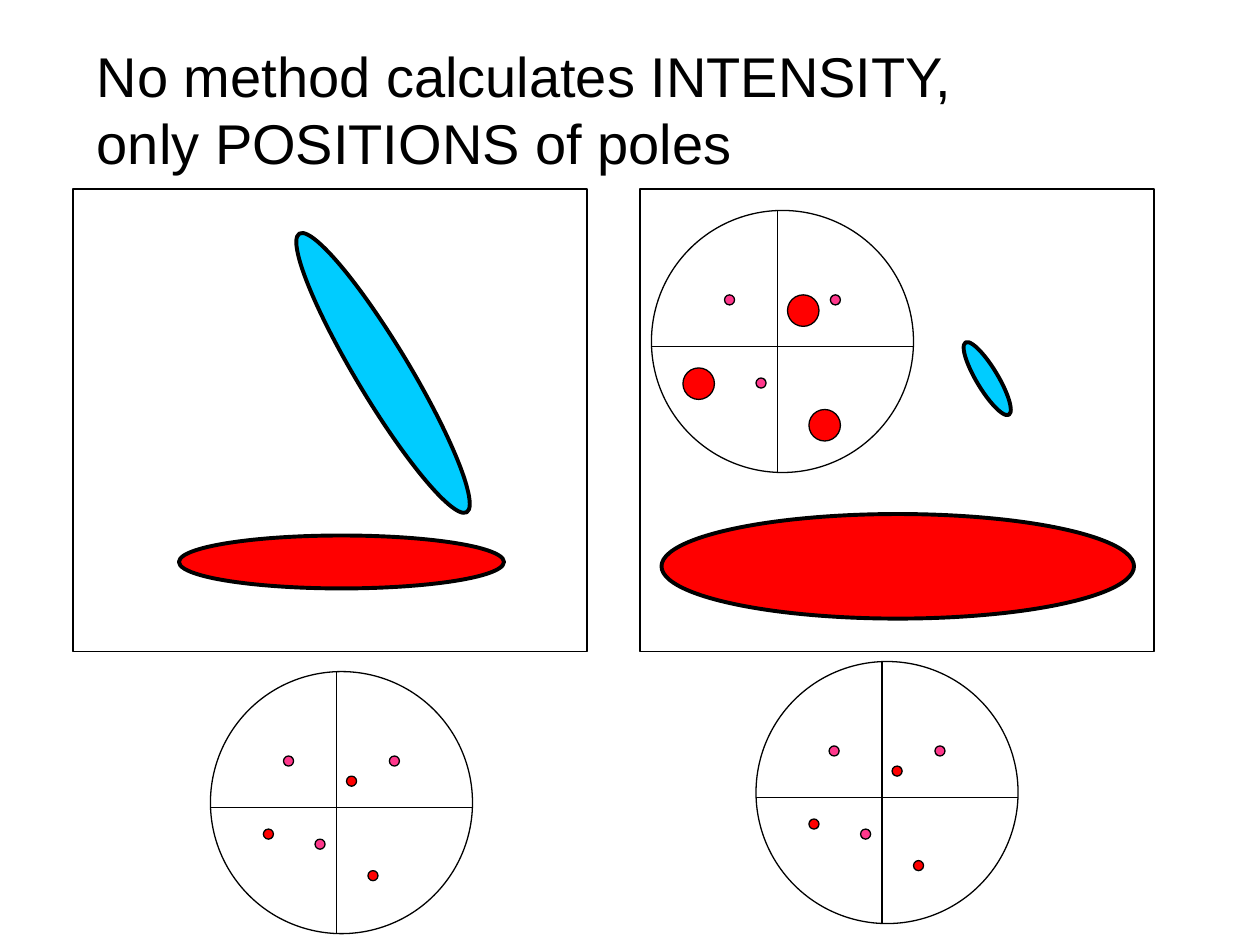
from typing import NamedTuple

from lxml import etree
from pptx import Presentation
from pptx.dml.color import RGBColor
from pptx.enum.shapes import MSO_CONNECTOR, MSO_SHAPE
from pptx.oxml.ns import qn
from pptx.util import Inches, Pt

OVAL = MSO_SHAPE.OVAL
RECT = MSO_SHAPE.RECTANGLE
LINE = MSO_CONNECTOR.STRAIGHT

HUES = {"ink": "000000", "red": "FF0000", "blue": "00CCFF", "pink": "FF388C"}
FORM = {"name": "Arial", "size": Pt(32)}
DISK = 2.08
DOT = 0.08
SPOT = 0.25


class Form(NamedTuple):
    kind: int
    left: float
    top: float
    wide: float
    high: float
    hue: str = ""
    width: float = 0.75
    turn: float = 0


class Pole(NamedTuple):
    left: float
    top: float
    hue: str


class Net(NamedTuple):
    left: float
    top: float
    size: float
    reds: list[Pole]
    group: bool = False


FORMS = [
    Form(RECT, 0.58, 1.5, 4.08, 3.67),
    Form(RECT, 5.08, 1.5, 4.08, 3.67),
    Form(OVAL, 1.42, 4.25, 2.58, 0.42, "red", 2.25),
    Form(OVAL, 1.75, 2.75, 2.58, 0.42, "blue", 2.25, 59),
    Form(OVAL, 5.25, 4.08, 3.75, 0.83, "red", 2.25),
    Form(OVAL, 7.5, 2.92, 0.67, 0.17, "blue", 2.25, 59),
]
PINKS = [Pole(0.58, 0.67, "pink"), Pole(1.42, 0.67, "pink"), Pole(0.83, 1.33, "pink")]
SMALL = [Pole(1.25, 1.58, "red"), Pole(0.42, 1.25, "red"), Pole(1.08, 0.83, "red")]
LARGE = [Pole(1.25, 1.58, "red"), Pole(0.25, 1.25, "red"), Pole(1.08, 0.67, "red")]
NETS = [
    Net(1.67, 5.33, DOT, SMALL),
    Net(6, 5.25, DOT, SMALL),
    Net(5.17, 1.67, SPOT, LARGE, True),
]


def tint(name: str) -> RGBColor:
    return RGBColor.from_string(HUES[name])


def draw_form(shapes, form: Form) -> None:
    box = [Inches(n) for n in (form.left, form.top, form.wide, form.high)]
    shape = shapes.add_shape(form.kind, *box)
    shape.shadow.inherit = False
    shape.rotation = form.turn
    if form.hue:
        shape.fill.solid()
        shape.fill.fore_color.rgb = tint(form.hue)
    else:
        shape.fill.background()
    shape.line.color.rgb = tint("ink")
    shape.line.width = Pt(form.width)


def draw_line(shapes, x1: float, y1: float, x2: float, y2: float) -> None:
    line = shapes.add_connector(LINE, *[Inches(n) for n in (x1, y1, x2, y2)])
    line.line.color.rgb = tint("ink")
    line.line.width = Pt(0.75)
    etree.SubElement(line._element.spPr, qn("a:effectLst"))


def draw_net(shapes, net: Net) -> None:
    if net.group:
        shapes = shapes.add_group_shape().shapes
    left, top = net.left, net.top
    draw_form(shapes, Form(OVAL, left, top, DISK, DISK))
    draw_line(shapes, left, top + 1.08, left + DISK, top + 1.08)
    draw_line(shapes, left + 1, top + DISK, left + 1, top)
    for poles, size in ((PINKS, DOT), (net.reds, net.size)):
        for pole in poles:
            spot = Form(OVAL, left + pole.left, top + pole.top, size, size, pole.hue)
            draw_form(shapes, spot)


def draw_title(shapes, words: str) -> None:
    box = shapes.add_textbox(Inches(0.67), Inches(0.23), Inches(7.33), Inches(1.17))
    frame = box.text_frame
    frame.word_wrap = True
    frame.margin_top = Inches(0.1)
    run = frame.paragraphs[0].add_run()
    run.text = words
    for key, value in FORM.items():
        setattr(run.font, key, value)
    run.font.color.rgb = tint("ink")


def main() -> None:
    deck = Presentation()
    deck.slide_width = Inches(10)
    deck.slide_height = Inches(7.5)
    shapes = deck.slides.add_slide(deck.slide_layouts[6]).shapes
    draw_title(shapes, "No method calculates INTENSITY, only POSITIONS of poles")
    for form in FORMS:
        draw_form(shapes, form)
    for net in NETS:
        draw_net(shapes, net)
    deck.save("out.pptx")


if __name__ == "__main__":
    main()
